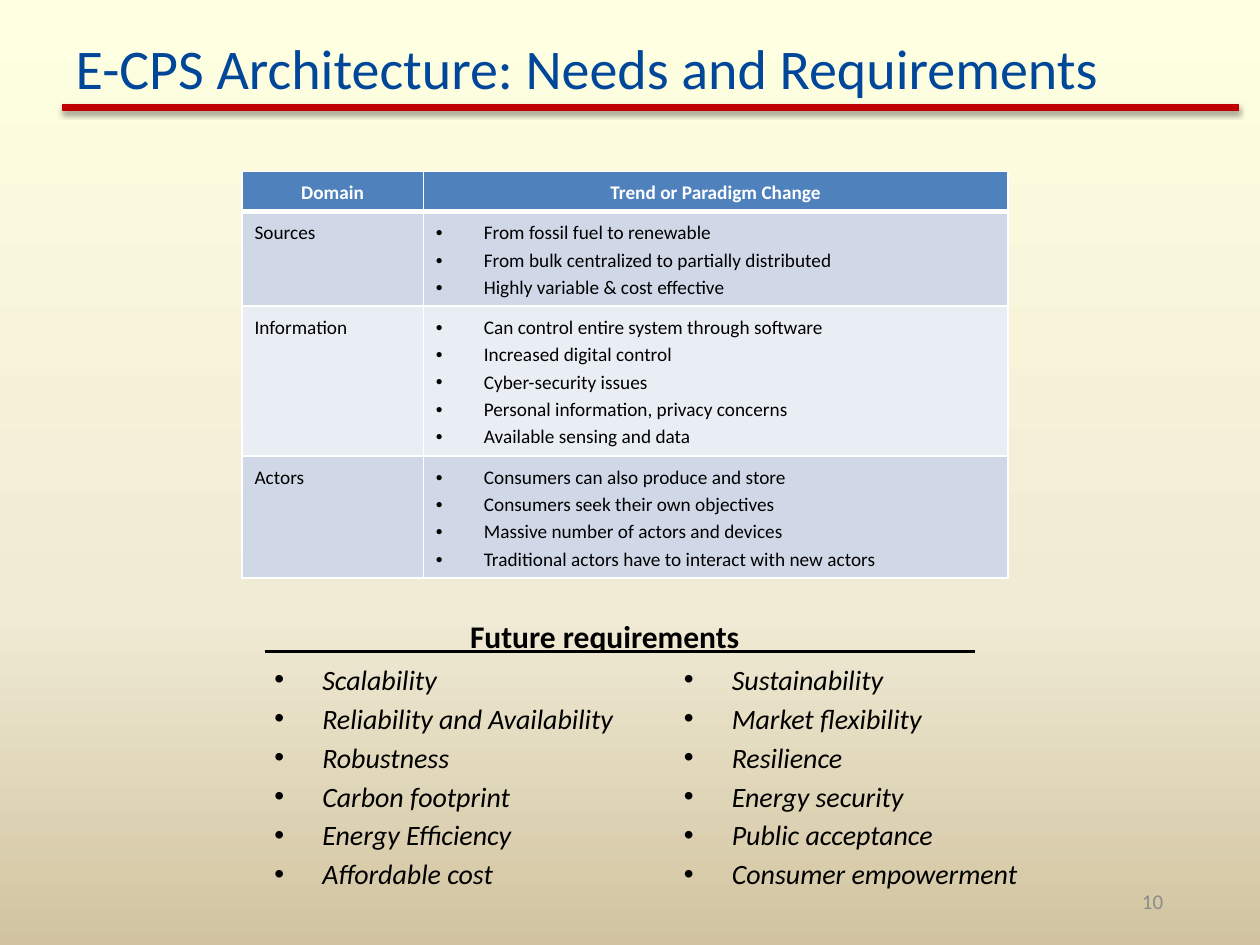
"""Build the slide on needs and requirements of the E-CPS architecture."""
from copy import deepcopy
from dataclasses import dataclass

from lxml import etree
from pptx import Presentation
from pptx import util as u
from pptx.dml.color import RGBColor
from pptx.enum import shapes, text
from pptx.oxml import parse_xml
from pptx.oxml.ns import nsdecls, qn


@dataclass(frozen=True)
class Theme:
    """Colours and type sizes of the slide."""
    font: str = "Calibri"
    title: str = "004699"
    rule: str = "C00000"
    ink: str = "000000"
    white: str = "FFFFFF"
    number: str = "8C8C8C"
    header: str = "4F81BD"
    bands: tuple = ("D0D8E8", "E9EDF4")
    backdrop: tuple = ((0, "FFFFE1"), (0.65, "F0EBD5"), (1, "D1C39F"))
    title_size: float = 32
    heading_size: float = 18
    body_size: float = 16
    number_size: float = 12
    table_size: float = 11


TITLE = "E-CPS Architecture: Needs and Requirements"
HEADINGS = ("Domain", "Trend or Paradigm Change")
DOMAINS = {
    "Sources": ["From fossil fuel to renewable",
                "From bulk centralized to partially distributed",
                "Highly variable & cost effective"],
    "Information": ["Can control entire system through software",
                    "Increased digital control",
                    "Cyber-security issues",
                    "Personal information, privacy concerns",
                    "Available sensing and data"],
    "Actors": ["Consumers can also produce and store",
               "Consumers seek their own objectives",
               "Massive number of actors and devices",
               "Traditional actors have to interact with new actors"],
}
REQUIREMENTS = (
    ["Scalability", "Reliability and Availability", "Robustness",
     "Carbon footprint", "Energy Efficiency", "Affordable cost"],
    ["Sustainability", "Market flexibility", "Resilience",
     "Energy security", "Public acceptance", "Consumer empowerment"],
)


class SlideBuilder:
    """Holds the theme and the current slide, and draws its elements."""

    def __init__(self, slide, theme):
        self.slide = slide
        self.theme = theme

    def background(self):
        """Fill the background with the three-stop vertical gradient."""
        fill = self.slide.background.fill
        fill.gradient()
        fill.gradient_angle = 270
        stop_list = next(self.slide.element.iter(qn("a:gsLst")))
        stop_list.append(deepcopy(stop_list[-1]))
        for stop, (position, color) in zip(fill.gradient_stops, self.theme.backdrop):
            stop.position = position
            stop.color.rgb = RGBColor.from_string(color)

    def paragraphs(self, frame, lines, size, color, bullet=False, layout=None, **font):
        """Add one paragraph per line with shared formats."""
        formats = {"name": self.theme.font, "size": u.Pt(size), **font}
        for index, line in enumerate(lines):
            paragraph = frame.paragraphs[0] if index == 0 else frame.add_paragraph()
            for name, value in (layout or {}).items():
                if index or name != "space_before":
                    setattr(paragraph, name, value)
            if bullet:
                self.bullet(paragraph)
            run = paragraph.add_run()
            run.text = line
            for name, value in formats.items():
                setattr(run.font, name, value)
            run.font.color.rgb = RGBColor.from_string(color)

    def bullet(self, paragraph):
        """Give a paragraph a hanging bullet."""
        properties = paragraph._p.get_or_add_pPr()
        indent = u.Inches(0.38)
        properties.set("marL", str(indent))
        properties.set("indent", str(-indent))
        etree.SubElement(properties, qn("a:buFont"), typeface="Arial")
        etree.SubElement(properties, qn("a:buChar"), char="•")

    def title(self, line, *box):
        """Place and fill the title placeholder."""
        shape = self.slide.shapes.title
        for name, value in zip(("left", "top", "width", "height"), box):
            setattr(shape, name, u.Inches(value))
        frame = shape.text_frame
        frame.vertical_anchor = text.MSO_ANCHOR.MIDDLE
        frame.auto_size = text.MSO_AUTO_SIZE.NONE
        self.paragraphs(frame, [line], self.theme.title_size, self.theme.title,
                        layout={"alignment": text.PP_ALIGN.LEFT})

    def text_box(self, box, lines, size, color, anchor=text.MSO_ANCHOR.TOP, **style):
        """Add a wrapping text box."""
        frame = self.slide.shapes.add_textbox(*map(u.Inches, box)).text_frame
        frame.word_wrap = True
        frame.vertical_anchor = anchor
        self.paragraphs(frame, lines, size, color, **style)

    def title_bar(self, *box):
        """Add the bar with a soft shadow under the title."""
        bar = self.slide.shapes.add_shape(
            shapes.MSO_SHAPE.RECTANGLE, *map(u.Inches, box))
        color = RGBColor.from_string(self.theme.rule)
        bar.fill.solid()
        bar.fill.fore_color.rgb = color
        bar.line.color.rgb = color
        bar.line.width = u.Pt(0.75)
        bar.shadow.inherit = False
        effects = bar.element.spPr.find(qn("a:effectLst"))
        effects.append(parse_xml(
            f'<a:outerShdw {nsdecls("a")} blurRad="{u.Pt(3.1)}" dist="{u.Pt(1.6)}" '
            'dir="5400000" rotWithShape="0"><a:srgbClr val="000000">'
            '<a:alpha val="38000"/></a:srgbClr></a:outerShdw>'))

    def line(self, left, right, top, width):
        """Add a plain horizontal line."""
        connector = self.slide.shapes.add_connector(
            shapes.MSO_CONNECTOR.STRAIGHT, *map(u.Inches, (left, top, right, top)))
        connector.line.color.rgb = RGBColor.from_string(self.theme.ink)
        connector.line.width = u.Pt(width)
        etree.SubElement(connector.element.spPr, qn("a:effectLst"))

    def cell(self, cell, lines, fill, color, bottom=1, layout=None, **style):
        """Fill and border one table cell and add its text."""
        properties = cell._tc.get_or_add_tcPr()
        for side, width in (("L", 1), ("R", 1), ("T", 1), ("B", bottom)):
            properties.append(parse_xml(
                f'<a:ln{side} {nsdecls("a")} w="{u.Pt(width)}"><a:solidFill>'
                f'<a:srgbClr val="{self.theme.white}"/></a:solidFill></a:ln{side}>'))
        cell.fill.solid()
        cell.fill.fore_color.rgb = RGBColor.from_string(fill)
        self.paragraphs(cell.text_frame, lines, self.theme.table_size, color,
                        layout={"line_spacing": 1.15, **(layout or {})}, **style)

    def table(self, left, top, widths, heights):
        """Add the table of domains and their trends."""
        box = (left, top, sum(widths), sum(heights))
        table = self.slide.shapes.add_table(
            len(heights), len(widths), *map(u.Inches, box)).table
        for column, width in zip(table.columns, widths):
            column.width = u.Inches(width)
        for row, height in zip(table.rows, heights):
            row.height = u.Inches(height)
        for cell, heading in zip(table.rows[0].cells, HEADINGS):
            self.cell(cell, [heading], self.theme.header, self.theme.white, bottom=3,
                      bold=True, layout={"alignment": text.PP_ALIGN.CENTER})
        for index, (domain, trends) in enumerate(DOMAINS.items()):
            style = {"fill": self.theme.bands[index % 2],
                     "color": self.theme.ink, "bold": False}
            self.cell(table.cell(index + 1, 0), [domain], **style)
            self.cell(table.cell(index + 1, 1), trends, bullet=True, **style)


def main():
    """Create the presentation and save it."""
    theme = Theme()
    presentation = Presentation()
    presentation.slide_width = u.Inches(10)
    presentation.slide_height = u.Inches(7.5)
    slide = presentation.slides.add_slide(presentation.slide_layouts[5])
    builder = SlideBuilder(slide, theme)
    builder.background()
    builder.title_bar(0.5, 0.83, 9.33, 0.05)
    builder.title(TITLE, 0.5, 0.22, 9, 0.62)
    builder.table(1.92, 1.36, (1.44, 4.64), (0.32, 0.75, 1.19, 0.96))
    builder.text_box((2, 4.85, 5.6, 0.4), ["Future requirements"], theme.heading_size,
                     theme.ink, bold=True, layout={"alignment": text.PP_ALIGN.CENTER})
    builder.line(2.1, 7.74, 5.17, 1.75)
    for left, requirements in zip((2.08, 5.33), REQUIREMENTS):
        builder.text_box((left, 5.21, 4.5, 2.04), requirements, theme.body_size,
                         theme.ink, bullet=True, italic=True,
                         layout={"space_before": u.Pt(3)})
    builder.text_box((7, 6.95, 2.33, 0.4), ["10"], theme.number_size, theme.number,
                     anchor=text.MSO_ANCHOR.MIDDLE,
                     layout={"alignment": text.PP_ALIGN.RIGHT})
    presentation.save("out.pptx")


if __name__ == "__main__":
    main()
